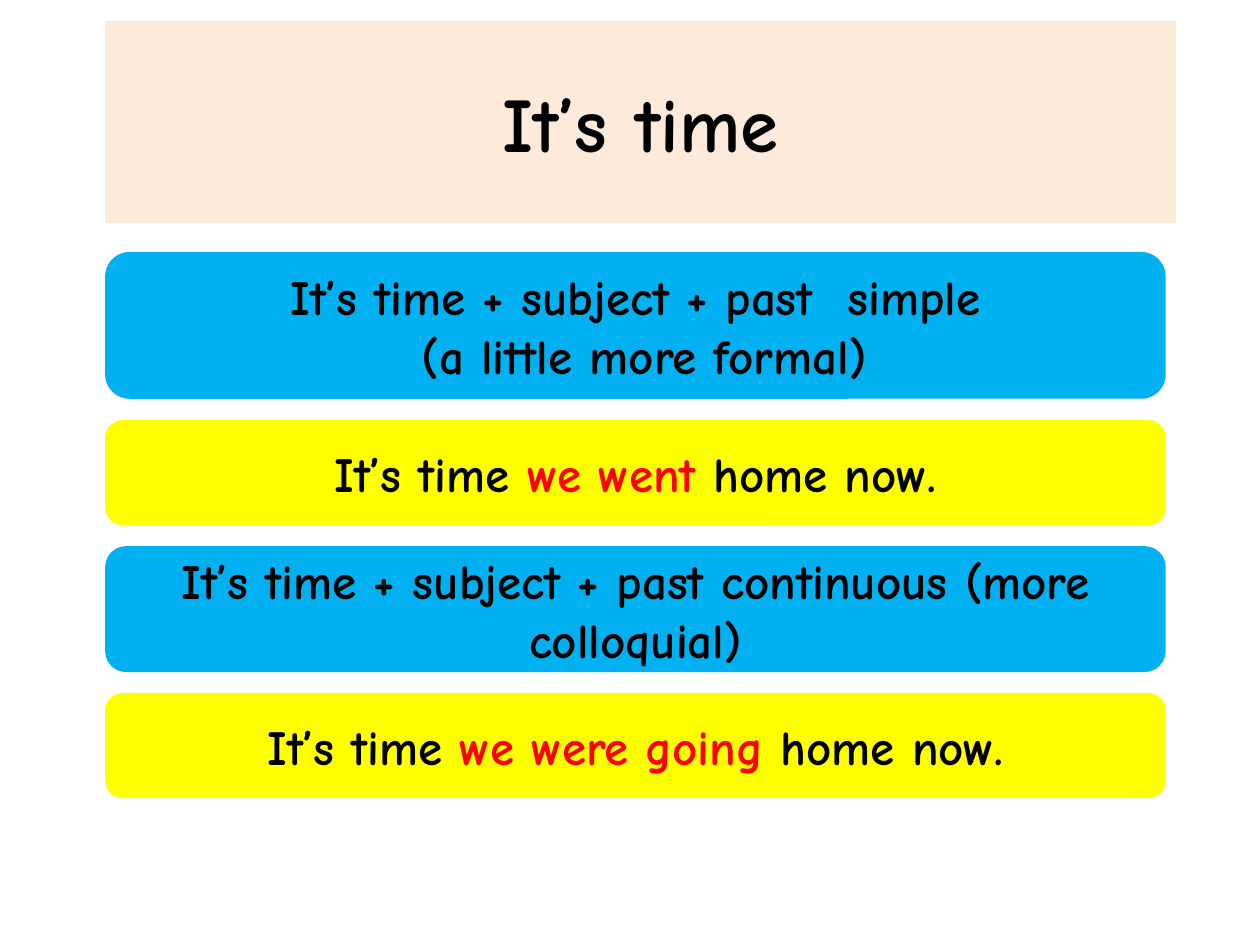
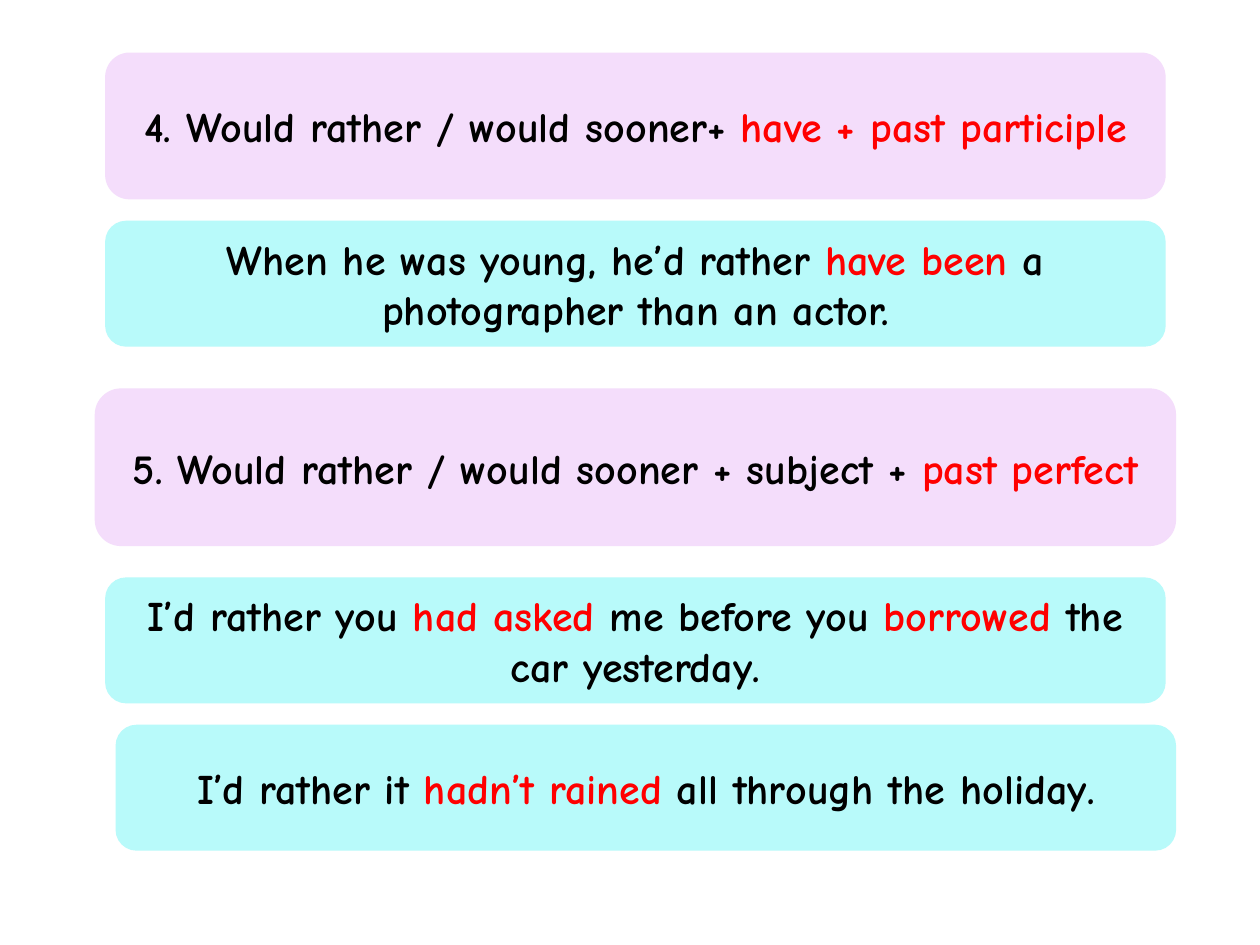
from pptx import Presentation
from pptx import util as u
from pptx.dml.color import RGBColor
from pptx.enum import shapes, text

BLACK = RGBColor(0x00, 0x00, 0x00)
RED = RGBColor(0xFF, 0x00, 0x00)
PEACH = RGBColor(0xFD, 0xEA, 0xDA)
BLUE = RGBColor(0x00, 0xB0, 0xF0)
YELLOW = RGBColor(0xFF, 0xFF, 0x00)
LILAC = RGBColor(0xF4, 0xDD, 0xFB)
AQUA = RGBColor(0xB8, 0xFA, 0xFA)

FONT = "Comic Neue"
LEFT = 2.12
CARD_WIDTH = 21.38
RECTANGLE = shapes.MSO_SHAPE.RECTANGLE
ROUNDED = shapes.MSO_SHAPE.ROUNDED_RECTANGLE


class GrammarDeck:
    def __init__(self):
        self.presentation = Presentation()
        self.presentation.slide_width = u.Cm(25.4)
        self.presentation.slide_height = u.Cm(19.05)
        self.slide = None
        self.card_size = None

    def new_slide(self, card_size):
        self.slide = self.presentation.slides.add_slide(self.presentation.slide_layouts[6])
        self.card_size = card_size

    def panel(self, kind, box, fill, size, lines):
        shape = self.slide.shapes.add_shape(kind, *map(u.Cm, box))
        shape.shadow.inherit = False
        shape.fill.solid()
        shape.fill.fore_color.rgb = fill
        shape.line.fill.background()
        frame = shape.text_frame
        frame.word_wrap = True
        frame.vertical_anchor = text.MSO_ANCHOR.MIDDLE
        for index, parts in enumerate(lines):
            paragraph = frame.add_paragraph() if index else frame.paragraphs[0]
            self.fill_paragraph(paragraph, size, parts)

    def fill_paragraph(self, paragraph, size, parts):
        paragraph.alignment = text.PP_ALIGN.CENTER
        paragraph.font.name = FONT
        paragraph.font.size = u.Pt(size)
        paragraph.font.bold = True
        for index, part in enumerate(parts):
            run = paragraph.add_run()
            run.text = part
            run.font.color.rgb = RED if index % 2 else BLACK

    def title(self, wording):
        self.panel(RECTANGLE, (LEFT, 0.42, 21.59, 4.08), PEACH, 44, [[wording]])

    def card(self, fill, top, height, *lines, left=LEFT, width=CARD_WIDTH):
        """Each line alternates plain and highlighted parts."""
        self.panel(ROUNDED, (left, top, width, height), fill, self.card_size, lines)


def build_its_time(deck):
    deck.new_slide(card_size=28)
    deck.title("It’s time")
    deck.card(BLUE, 5.08, 2.96,
              ["It’s time + subject + past  simple"],
              [" (a little more formal)"])
    deck.card(YELLOW, 8.47, 2.12, ["It’s time ", "we went ", "home now."])
    deck.card(BLUE, 11.01, 2.54,
              ["It’s time + subject + past continuous (more colloquial)"])
    deck.card(YELLOW, 13.97, 2.12, ["It’s time ", "we were going ", "home now."])


def build_would_rather(deck):
    deck.new_slide(card_size=24)
    deck.card(LILAC, 1.06, 2.96,
              ["4. Would rather / would sooner+ ", "have + past participle"])
    deck.card(AQUA, 4.45, 2.54,
              ["When he was young, he’d rather ", "have been ",
               "a photographer than an actor."])
    deck.card(LILAC, 7.83, 3.18,
              ["5. Would rather / would sooner + subject + ", "past perfect"],
              left=1.91, width=21.8)
    deck.card(AQUA, 11.64, 2.54,
              ["I’d rather you ", "had asked ", "me before you ",
               "borrowed ", "the car yesterday."])
    deck.card(AQUA, 14.61, 2.54,
              ["I’d rather it ", "hadn’t rained ", "all through the holiday."],
              left=2.33)


def main():
    deck = GrammarDeck()
    build_its_time(deck)
    build_would_rather(deck)
    deck.presentation.save("out.pptx")


if __name__ == "__main__":
    main()
